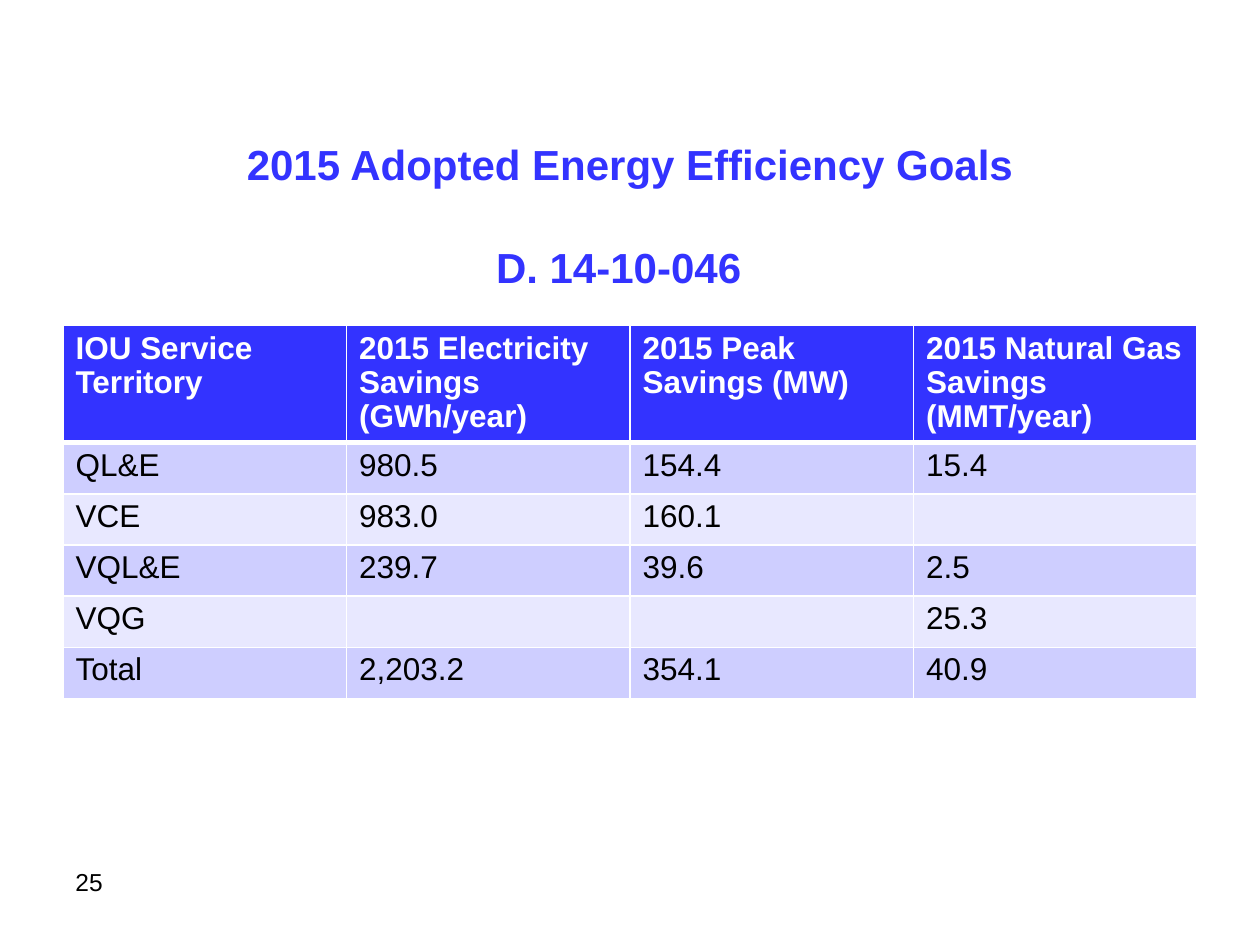
"""Build a slide with a table of 2015 adopted energy efficiency goals."""
from lxml.etree import SubElement
from pptx import Presentation
from pptx.dml.color import RGBColor
from pptx.enum.text import MSO_ANCHOR, MSO_AUTO_SIZE, PP_ALIGN
from pptx.oxml.ns import qn
from pptx.util import Pt

COLORS = {"blue": "3333FF", "white": "FFFFFF", "black": "000000",
          "band": "CECEFF", "pale": "E8E8FF"}
ROWS = [
    ["IOU Service Territory", "2015 Electricity Savings (GWh/year)",
     "2015 Peak Savings (MW)", "2015 Natural Gas Savings (MMT/year)"],
    ["QL&E", "980.5", "154.4", "15.4"],
    ["VCE", "983.0", "160.1", ""],
    ["VQL&E", "239.7", "39.6", "2.5"],
    ["VQG", "", "", "25.3"],
    ["Total", "2,203.2", "354.1", "40.9"],
]


def write(p, text, size=18, color="black", bold=False, align=PP_ALIGN.LEFT, spacing=None):
    p.alignment = align
    p.line_spacing = spacing
    p.font.size = Pt(size)
    r = p.add_run()
    r.text = text
    r.font.name = "Arial"
    r.font.size = Pt(size)
    r.font.bold = bold
    r.font.color.rgb = RGBColor.from_string(COLORS[color])


def add_border(cell, side, width):
    ln = SubElement(cell._tc.get_or_add_tcPr(), qn(f"a:{side}"), w=str(Pt(width)))
    fill = SubElement(ln, qn("a:solidFill"))
    SubElement(fill, qn("a:srgbClr"), val=COLORS["white"])


prs = Presentation()
prs.slide_width, prs.slide_height = Pt(720), Pt(540)
s = prs.slides.add_slide(prs.slide_layouts[5])

title = s.shapes.title
title.left, title.top, title.width, title.height = Pt(36), Pt(84), Pt(648), Pt(78)
tf = title.text_frame
tf.word_wrap = True
tf.auto_size = MSO_AUTO_SIZE.NONE
tf.vertical_anchor = MSO_ANCHOR.MIDDLE
heading = {"size": 24, "color": "blue", "bold": True, "align": PP_ALIGN.CENTER}
write(tf.paragraphs[0], "2015 Adopted Energy Efficiency Goals", **heading)
p = tf.add_paragraph()
write(p, "D. 14-10-046", **heading)
p.space_before = Pt(30)
p._p.get_or_add_pPr().set("marR", str(Pt(13)))

table = s.shapes.add_table(len(ROWS), len(ROWS[0]), Pt(36), Pt(186), Pt(648), Pt(213)).table
for i, values in enumerate(ROWS):
    header = i == 0
    table.rows[i].height = Pt(67 if header else 29.25)
    fill = "blue" if header else ("band" if i % 2 else "pale")
    for j, value in enumerate(values):
        cell = table.cell(i, j)
        for side in ("lnL", "lnR", "lnT", "lnB"):
            thick = (header and side == "lnB") or (i == 1 and side == "lnT")
            add_border(cell, side, 3 if thick else 1)
        cell.fill.solid()
        cell.fill.fore_color.rgb = RGBColor.from_string(COLORS[fill])
        write(cell.text_frame.paragraphs[0], value, bold=header,
              color="white" if header else "black", spacing=0.97)

number = s.shapes.add_textbox(Pt(36), Pt(492), Pt(132), Pt(37.5))
number.text_frame.word_wrap = True
write(number.text_frame.paragraphs[0], "25", size=14)

prs.save("out.pptx")
